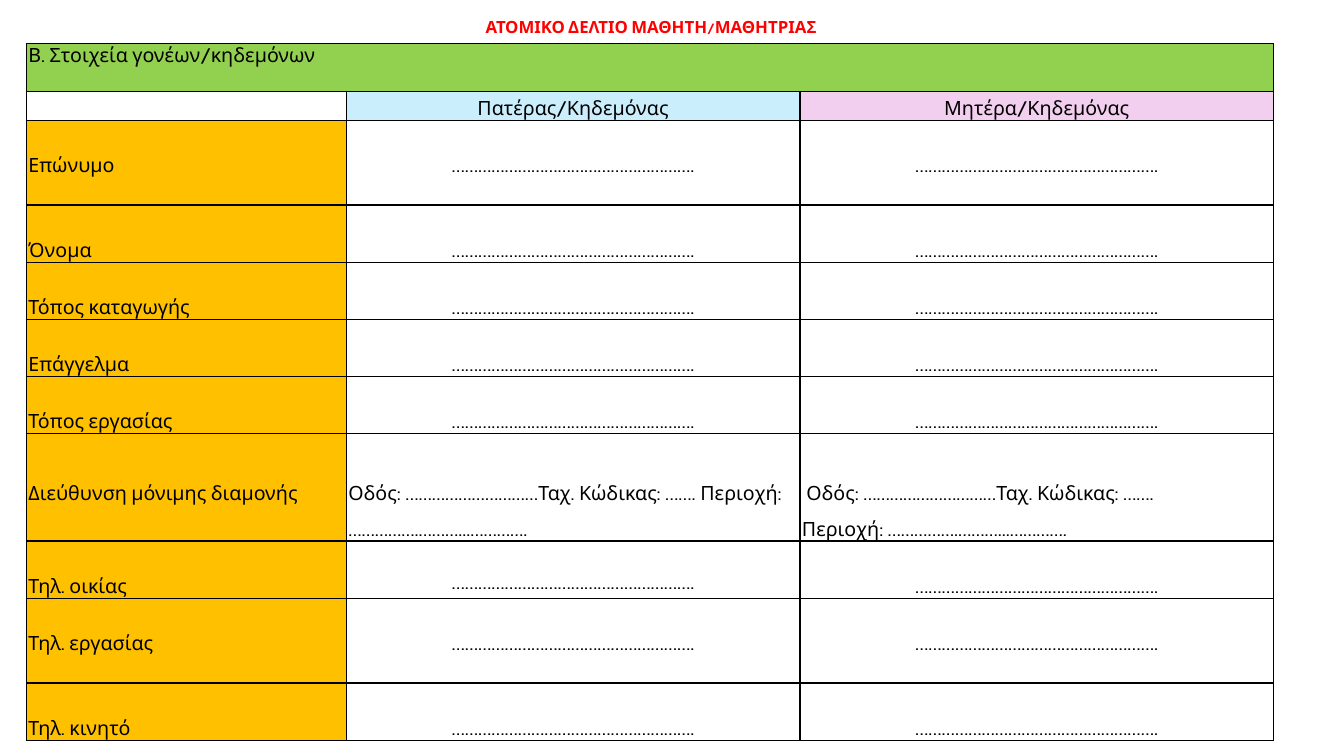
from lxml import etree
from pptx import Presentation
from pptx.dml.color import RGBColor
from pptx.enum.text import MSO_ANCHOR, PP_ALIGN
from pptx.oxml.ns import qn
from pptx.util import Pt

LEFT, CENTER = PP_ALIGN.LEFT, PP_ALIGN.CENTER
MIDDLE = MSO_ANCHOR.MIDDLE
FONT = "Cabin"
BLACK, RED = "000000", "FF0000"
GREEN, ORANGE, BLUE, PINK = "92D050", "FFC000", "CAEEFB", "F2CFEE"

COLUMN_WIDTHS = (228.5, 324, 338.4)
HEADING_HEIGHT, PARENTS_HEIGHT = 34.4, 20.4
LINE_GAP, ADDRESS_GAP = 20.4, 25.5
FIELD_HEIGHT, TALL_HEIGHT, ADDRESS_HEIGHT = 40.8, 60.6, 76.5
DOTS = "………………………………………………."
STREET = "Οδός: …………………………Ταχ. Κώδικας: ……."
AREA = "Περιοχή: …………….………...…………."

# Label, row height
FIELDS = (
    ("Επώνυμο", TALL_HEIGHT),
    ("Όνομα", FIELD_HEIGHT),
    ("Τόπος καταγωγής", FIELD_HEIGHT),
    ("Επάγγελμα", FIELD_HEIGHT),
    ("Τόπος εργασίας", FIELD_HEIGHT),
    ("Διεύθυνση μόνιμης διαμονής", ADDRESS_HEIGHT),
    ("Τηλ. οικίας", FIELD_HEIGHT),
    ("Τηλ. εργασίας", TALL_HEIGHT),
    ("Τηλ. κινητό", FIELD_HEIGHT),
)


def color(value):
    return RGBColor.from_string(value)


def add_run(paragraph, text, size, text_color, bold=False):
    run = paragraph.add_run()
    run.text = text
    run.font.name = FONT
    run.font.size = Pt(size)
    run.font.bold = bold
    run.font.color.rgb = color(text_color)
    return run


def add_borders(cell):
    properties = cell._tc.get_or_add_tcPr()
    for side in ("a:lnL", "a:lnR", "a:lnT", "a:lnB"):
        line = etree.SubElement(properties, qn(side), w=str(Pt(1)))
        solid = etree.SubElement(line, qn("a:solidFill"))
        etree.SubElement(solid, qn("a:srgbClr"), val=BLACK)


def format_cell(cell, lines=(), fill=None, align=LEFT, spacing=1.2, top=0):
    cell.margin_left = cell.margin_right = Pt(1.4)
    cell.margin_top, cell.margin_bottom = Pt(top), Pt(0)
    add_borders(cell)
    if fill:
        cell.fill.solid()
        cell.fill.fore_color.rgb = color(fill)
    else:
        cell.fill.background()
    frame = cell.text_frame
    for index, text in enumerate(lines):
        paragraph = frame.add_paragraph() if index else frame.paragraphs[0]
        paragraph.alignment = align
        paragraph.line_spacing = spacing
        add_run(paragraph, text, 14, BLACK)
    if not lines:
        etree.SubElement(frame.paragraphs[0]._p, qn("a:endParaRPr"), sz="1400")


def add_title(slide):
    box = slide.shapes.add_textbox(Pt(339.8), Pt(0), Pt(411.1), Pt(39.6))
    frame = box.text_frame
    frame.word_wrap = True
    frame.vertical_anchor = MIDDLE
    paragraph = frame.paragraphs[0]
    paragraph.line_spacing = 0.9
    paragraph.space_after = Pt(6)
    run = add_run(paragraph, "ΑΤΟΜΙΚΟ ΔΕΛΤΙΟ ΜΑΘΗΤΗ/ΜΑΘΗΤΡΙΑΣ", 12, RED, True)
    run._r.get_or_add_rPr().set("cap", "small")


def add_parents_table(slide):
    heights = [HEADING_HEIGHT, PARENTS_HEIGHT] + [height for _, height in FIELDS]
    table = slide.shapes.add_table(
        len(heights), len(COLUMN_WIDTHS), Pt(18.9), Pt(31),
        Pt(sum(COLUMN_WIDTHS)), Pt(sum(heights))).table
    table.first_row = table.horz_banding = False
    for column, width in zip(table.columns, COLUMN_WIDTHS):
        column.width = Pt(width)
    for row, height in zip(table.rows, heights):
        row.height = Pt(height)

    # Section heading across all columns
    table.cell(0, 0).merge(table.cell(0, 2))
    format_cell(table.cell(0, 0), ["Β. Στοιχεία γονέων/κηδεμόνων"], GREEN, spacing=1)
    for column in (1, 2):
        format_cell(table.cell(0, column))

    # Column headings
    format_cell(table.cell(1, 0))
    format_cell(table.cell(1, 1), ["Πατέρας/Κηδεμόνας"], BLUE, CENTER)
    format_cell(table.cell(1, 2), ["Μητέρα/Κηδεμόνας"], PINK, CENTER)

    # Fields to fill in
    for row, (label, height) in enumerate(FIELDS, start=2):
        father, mother = table.cell(row, 1), table.cell(row, 2)
        if height == ADDRESS_HEIGHT:
            layout = {"spacing": 1.5, "top": ADDRESS_GAP}
            format_cell(father, [f"{STREET} {AREA}"], **layout)
            format_cell(mother, [f" {STREET}", AREA], **layout)
        else:
            layout = {"top": LINE_GAP}
            father_top = 17.5 if label == "Τηλ. οικίας" else LINE_GAP
            format_cell(father, [DOTS], align=CENTER, top=father_top)
            format_cell(mother, [DOTS], align=CENTER, **layout)
        format_cell(table.cell(row, 0), [label], ORANGE, **layout)


def main():
    presentation = Presentation()
    presentation.slide_width, presentation.slide_height = Pt(960), Pt(540)
    slide = presentation.slides.add_slide(presentation.slide_layouts[6])
    add_parents_table(slide)
    add_title(slide)
    presentation.save("out.pptx")


if __name__ == "__main__":
    main()
